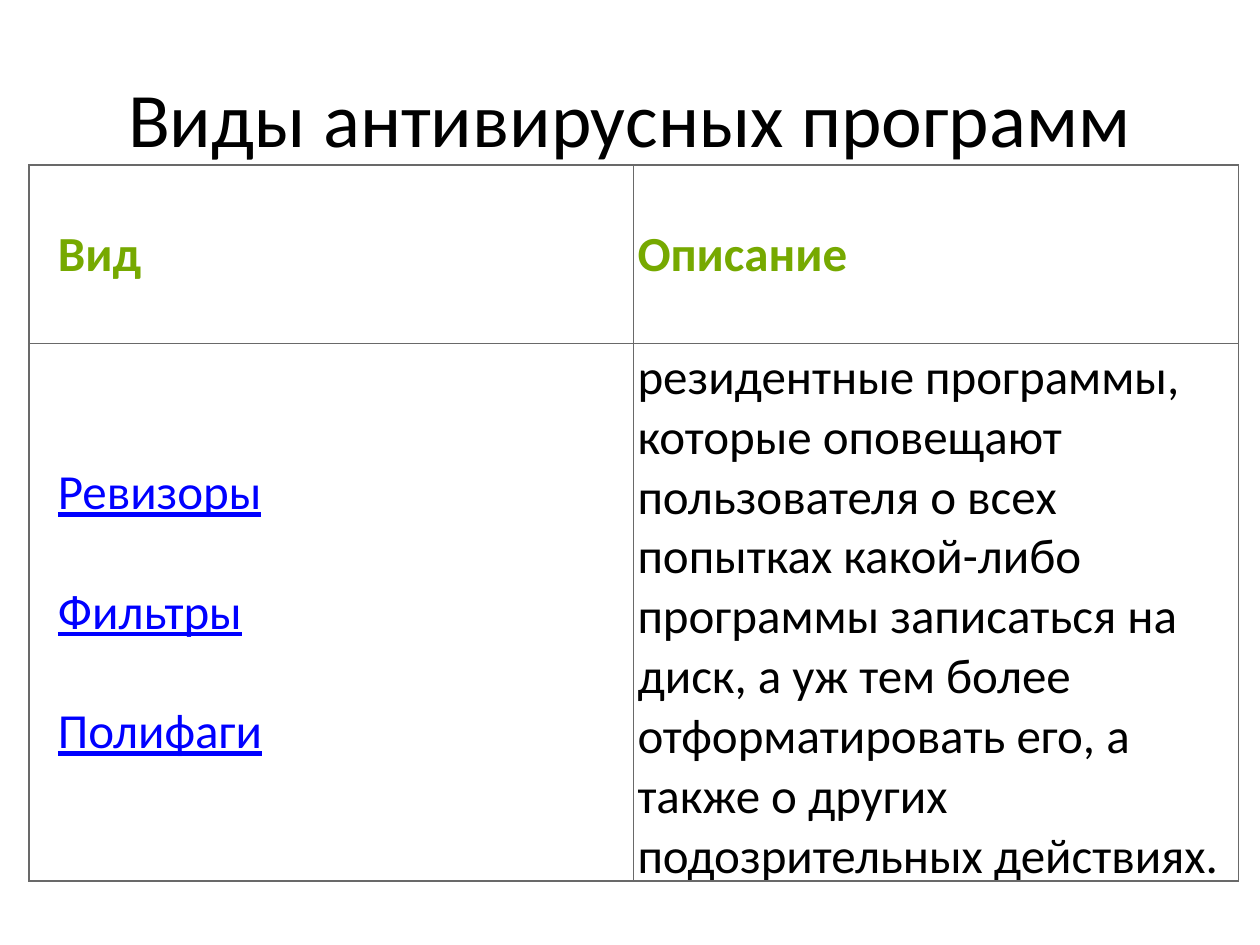
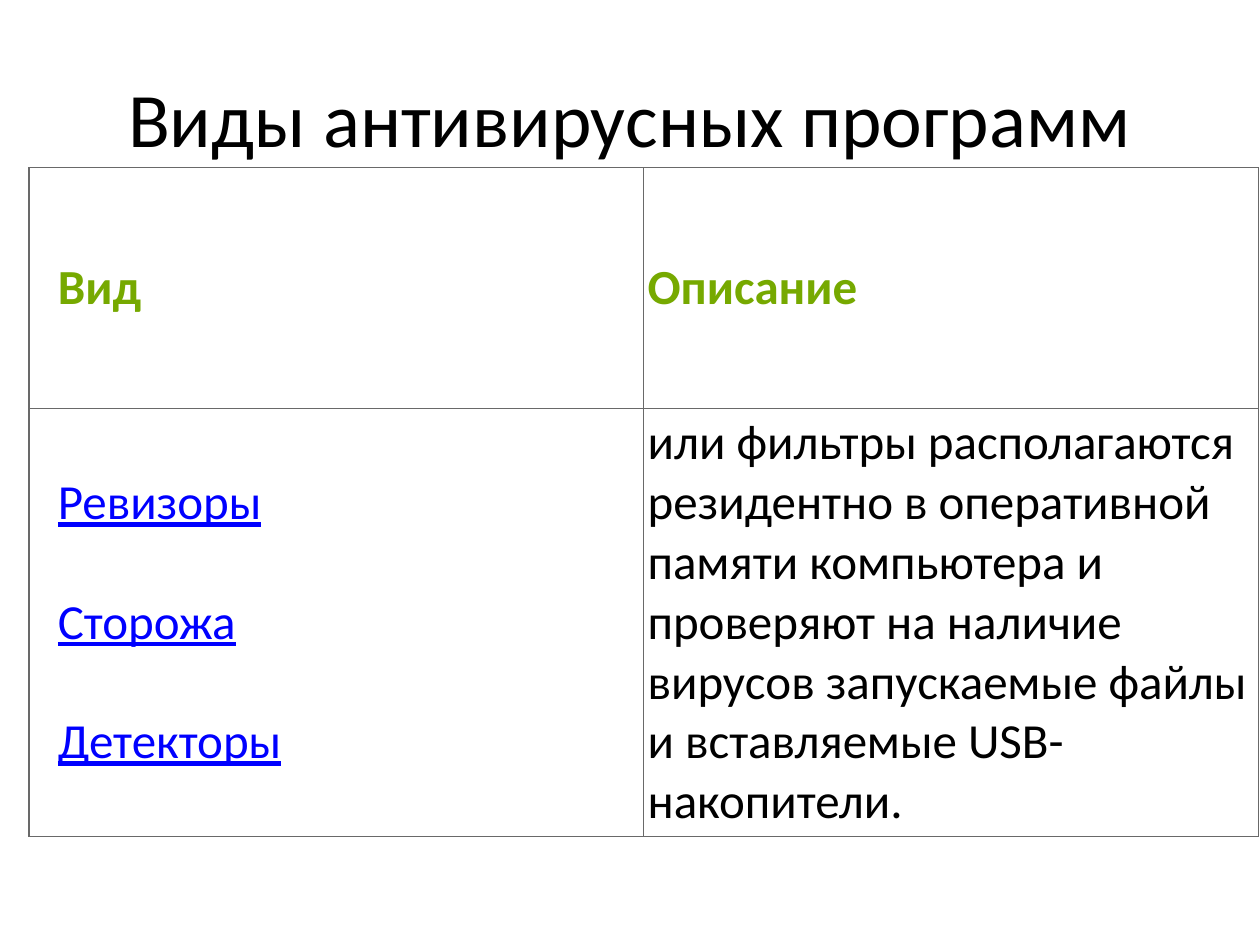
from lxml import etree
from pptx import Presentation
from pptx import util as u
from pptx.dml.color import RGBColor
from pptx.enum import text
from pptx.oxml.ns import qn

FONT = "Calibri"
BLACK, WHITE, GREEN, BLUE, GRAY = "000000", "FFFFFF", "76A900", "0000FF", "696969"
TITLE = "Виды антивирусных программ"
HEADERS = ["Вид", "Описание"]
CELL_MARGIN = u.Inches(0.03)
KIND_INDENT = u.Inches(0.2)
KIND_GAP = u.Pt(34)

# Each slide: table top, column width, row heights, kinds, description
SLIDES = [
    (1.31, 4.8, [1.42, 4.09], ["Ревизоры", "Фильтры", "Полифаги"],
     "резидентные программы, которые оповещают пользователя о всех попытках "
     "какой-либо программы записаться на диск, а уж тем более отформатировать его, "
     "а также о других подозрительных действиях."),
    (1.33, 4.88, [1.91, 3.4], ["Ревизоры", "Сторожа", "Детекторы"],
     "или фильтры располагаются резидентно в оперативной памяти компьютера "
     "и проверяют на наличие вирусов запускаемые файлы и вставляемые USB-накопители."),
]


def add_run(paragraph, words, size, color, bold=False, underline=False):
    run = paragraph.add_run()
    run.text = words
    run.font.name = FONT
    run.font.size = u.Pt(size)
    run.font.bold = bold
    run.font.underline = underline
    run.font.color.rgb = RGBColor.from_string(color)


def style_cell(cell):
    """Give the cell its margins, white fill and thin gray borders."""
    cell.margin_left = cell.margin_right = CELL_MARGIN
    cell.margin_top = cell.margin_bottom = CELL_MARGIN
    cell.vertical_anchor = text.MSO_ANCHOR.MIDDLE
    cell.fill.solid()
    cell.fill.fore_color.rgb = RGBColor.from_string(WHITE)
    properties = cell._tc.get_or_add_tcPr()
    for position, side in enumerate(["a:lnL", "a:lnR", "a:lnT", "a:lnB"]):
        border = etree.Element(qn(side), w=str(u.Pt(0.75)))
        fill = etree.SubElement(border, qn("a:solidFill"))
        etree.SubElement(fill, qn("a:srgbClr"), val=GRAY)
        properties.insert(position, border)


presentation = Presentation()
presentation.slide_width = u.Inches(10)
presentation.slide_height = u.Inches(7.5)

for top, column_width, row_heights, kinds, description in SLIDES:
    slide = presentation.slides.add_slide(presentation.slide_layouts[6])

    title = slide.shapes.add_textbox(u.Inches(0.5), u.Inches(0.3), u.Inches(9), u.Inches(1.25))
    title.text_frame.word_wrap = True
    title.text_frame.vertical_anchor = text.MSO_ANCHOR.MIDDLE
    paragraph = title.text_frame.paragraphs[0]
    paragraph.alignment = text.PP_ALIGN.CENTER
    add_run(paragraph, TITLE, 44, BLACK)

    table = slide.shapes.add_table(2, 2, u.Inches(0.23), u.Inches(top),
                                   u.Inches(2 * column_width),
                                   u.Inches(sum(row_heights))).table
    table.first_row = table.horz_banding = False
    for column in table.columns:
        column.width = u.Inches(column_width)
    for row, height in zip(table.rows, row_heights):
        row.height = u.Inches(height)
    for cell in table.iter_cells():
        style_cell(cell)

    for column_index, header in enumerate(HEADERS):
        paragraph = table.cell(0, column_index).text_frame.paragraphs[0]
        add_run(paragraph, header, 28, GREEN, bold=True)

    kinds_frame = table.cell(1, 0).text_frame
    for index, kind in enumerate(kinds):
        paragraph = kinds_frame.add_paragraph() if index else kinds_frame.paragraphs[0]
        if index:
            paragraph.space_before = KIND_GAP
        add_run(paragraph, kind, 28, BLUE, underline=True)

    for row_index in range(2):
        for paragraph in table.cell(row_index, 0).text_frame.paragraphs:
            paragraph._p.get_or_add_pPr().set("marL", str(KIND_INDENT))

    add_run(table.cell(1, 1).text_frame.paragraphs[0], description, 28, BLACK)

presentation.save("out.pptx")
